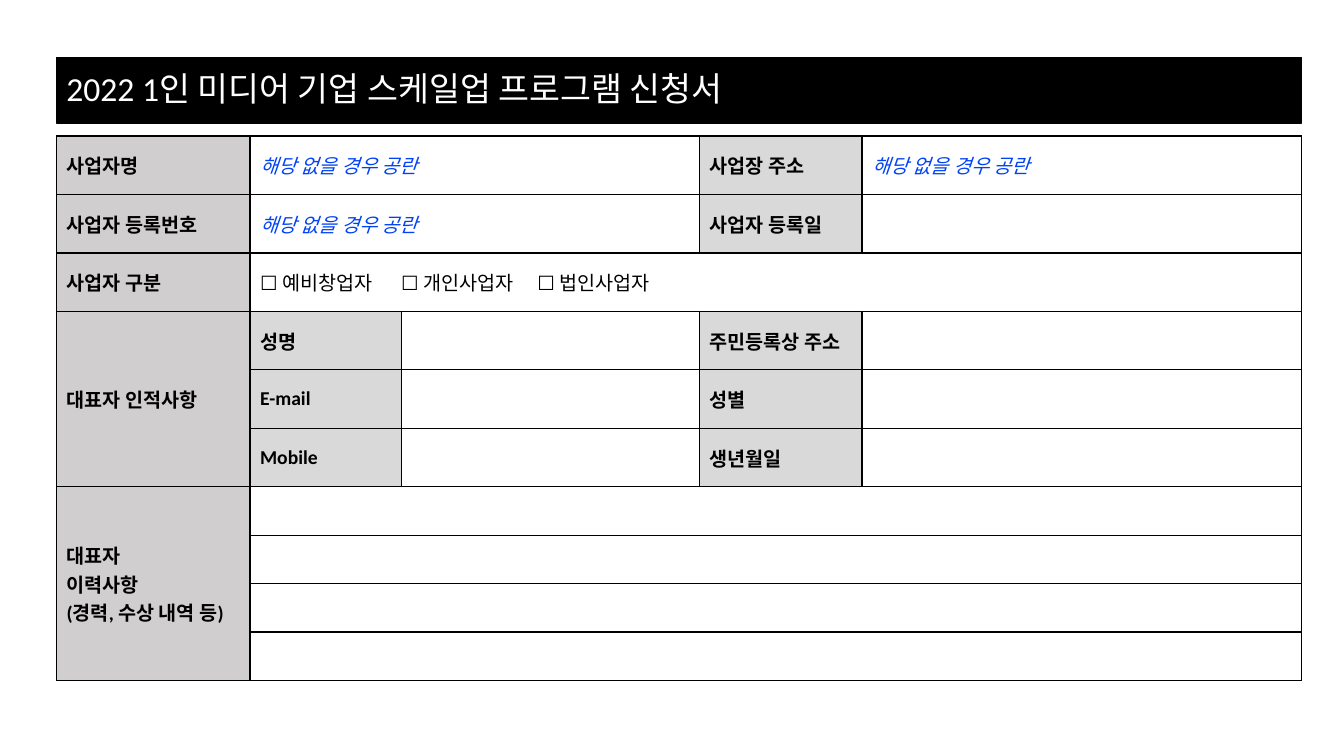
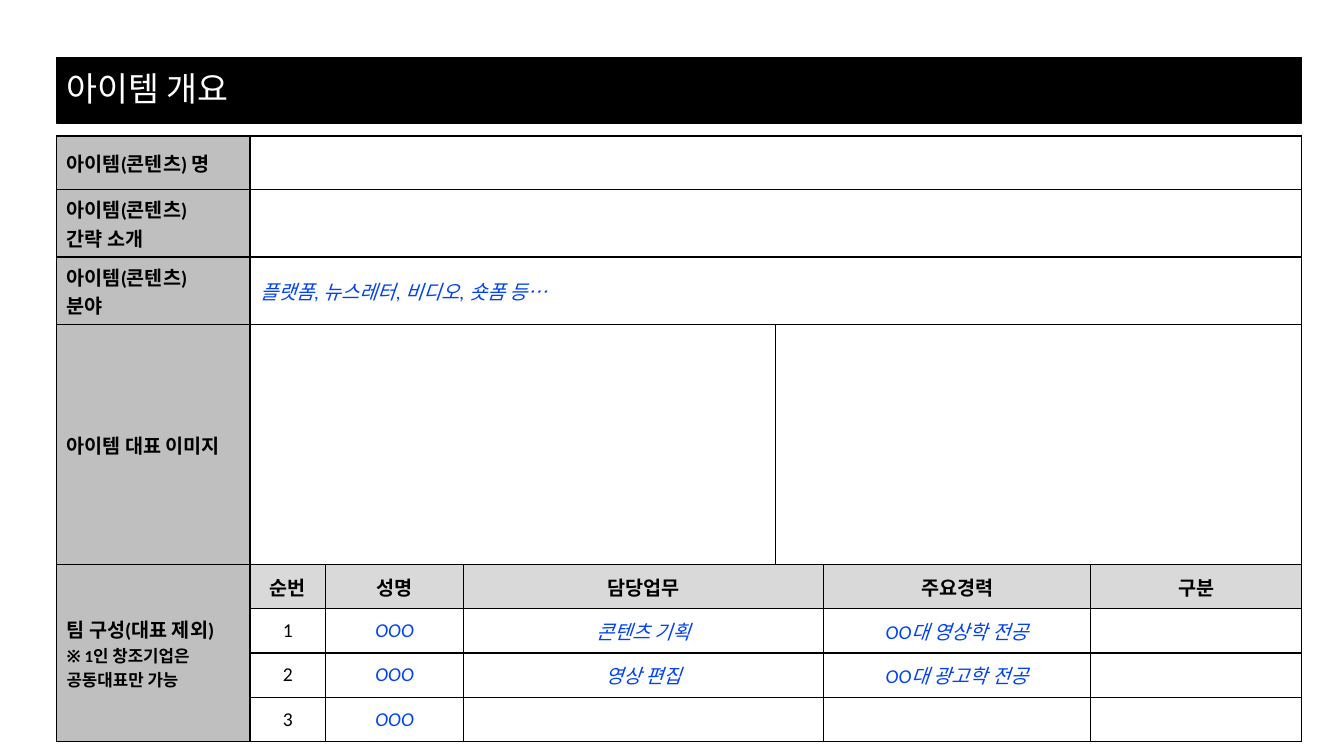
from lxml import etree
from pptx import Presentation
from pptx import util as u
from pptx.dml.color import RGBColor
from pptx.enum import shapes, text
from pptx.oxml.ns import qn

PX = 9144
MIDDLE = text.MSO_ANCHOR.MIDDLE
LEFT, CENTER = text.PP_ALIGN.LEFT, text.PP_ALIGN.CENTER


def px(n):
    return u.Emu(n * PX)


def rgb(value):
    return RGBColor.from_string(value)


def put_text(tf, content, size=14, color="000000", bold=False, italic=False,
             align=LEFT, spacing=1.0, font="Calibri", note_size=None, tabs=()):
    for i, line in enumerate(content.split("\n")):
        p = tf.add_paragraph() if i else tf.paragraphs[0]
        p.alignment = align
        p.line_spacing = spacing
        if tabs:
            tab_list = etree.SubElement(p._p.get_or_add_pPr(), qn("a:tabLst"))
            for stop in tabs:
                etree.SubElement(tab_list, qn("a:tab"), pos=str(px(stop)), algn="l")
        r = p.add_run()
        r.text = line
        r.font.name = font
        r.font.size = u.Pt(note_size if i and note_size else size)
        r.font.bold = bold
        r.font.italic = italic
        r.font.color.rgb = rgb(color)


class Deck:
    LEFT, WIDTH = 56, 1235
    BLACK, WHITE = "000000", "FFFFFF"
    STYLES = {
        "side": ("D0CECE", dict(bold=True)),
        "dark_side": ("BFBFBF", dict(bold=True)),
        "label": ("D9D9D9", dict(bold=True)),
        "head": ("D9D9D9", dict(bold=True, align=CENTER)),
        "body": (WHITE, {}),
        "number": (WHITE, dict(align=CENTER)),
        "hint": (WHITE, dict(color="0042F4", italic=True)),
        "sample": (WHITE, dict(color="0042F4", italic=True, align=CENTER)),
    }

    def __init__(self):
        self.prs = Presentation()
        self.prs.slide_width = u.Inches(13.33)
        self.prs.slide_height = u.Inches(7.5)
        self.s = None

    def slide(self, title):
        self.s = self.prs.slides.add_slide(self.prs.slide_layouts[6])
        self.title(title)

    def title(self, content):
        sp = self.s.shapes.add_shape(shapes.MSO_SHAPE.RECTANGLE, px(self.LEFT),
                                     px(57), px(self.WIDTH), px(65))
        sp.shadow.inherit = False
        sp.fill.solid()
        sp.fill.fore_color.rgb = rgb(self.BLACK)
        sp.line.color.rgb = rgb(self.BLACK)
        sp.line.width = u.Pt(1)
        tf = sp.text_frame
        tf.word_wrap = True
        tf.vertical_anchor = MIDDLE
        put_text(tf, content, size=24, color=self.WHITE, spacing=0.9)

    def table(self, cols, rows):
        frame = self.s.shapes.add_table(len(rows), len(cols), px(self.LEFT),
                                        px(135), px(self.WIDTH), px(sum(rows)))
        table = frame.table
        table.first_row = table.horz_banding = False
        for column, width in zip(table.columns, cols):
            column.width = px(width)
        for row, height in zip(table.rows, rows):
            row.height = px(height)
        for cell in table.iter_cells():
            self.border(cell)
            self.fill(cell, self.WHITE)
        return table

    def border(self, cell):
        tc_pr = cell._tc.get_or_add_tcPr()
        for side in ("a:lnL", "a:lnR", "a:lnT", "a:lnB"):
            ln = etree.SubElement(tc_pr, qn(side), w=str(u.Pt(1)))
            solid = etree.SubElement(ln, qn("a:solidFill"))
            etree.SubElement(solid, qn("a:srgbClr"), val=self.BLACK)

    def fill(self, cell, color):
        cell.fill.solid()
        cell.fill.fore_color.rgb = rgb(color)

    def cell(self, table, row, col, content="", style="body", down=1, across=1, **extra):
        cell = table.cell(row, col)
        if down > 1 or across > 1:
            cell.merge(table.cell(row + down - 1, col + across - 1))
        color, form = self.STYLES[style]
        self.fill(cell, color)
        cell.vertical_anchor = MIDDLE
        if content:
            put_text(cell.text_frame, content, **form, **extra)


def application(deck):
    deck.slide("2022 1인 미디어 기업 스케일업 프로그램 신청서")
    t = deck.table([192, 150, 296, 161, 436], [58] * 6 + [48] * 4)
    blank = "해당 없을 경우 공란"

    for row, name in enumerate(["사업자명", "사업자 등록번호", "사업자 구분"]):
        deck.cell(t, row, 0, name, "side")
    for row, name in enumerate(["사업장 주소", "사업자 등록일"]):
        deck.cell(t, row, 1, blank, "hint", across=2)
        deck.cell(t, row, 3, name, "label")
    deck.cell(t, 0, 4, blank, "hint")
    deck.cell(t, 2, 1, "☐ 예비창업자\t☐ 개인사업자\t☐ 법인사업자", across=4, tabs=(140, 275))

    deck.cell(t, 3, 0, "대표자 인적사항", "side", down=3)
    personal = [("성명", "주민등록상 주소"), ("E-mail", "성별"), ("Mobile", "생년월일")]
    for row, (first, second) in enumerate(personal, 3):
        deck.cell(t, row, 1, first, "label")
        deck.cell(t, row, 3, second, "label")

    deck.cell(t, 6, 0, "대표자\n이력사항\n(경력, 수상 내역 등)", "side", down=4)
    for row in range(6, 10):
        deck.cell(t, row, 1, across=4)


def item_overview(deck):
    deck.slide("아이템 개요")
    t = deck.table([192, 75, 137, 309, 48, 265, 209], [53, 67, 67, 238] + [44] * 4)

    items = [
        ("아이템(콘텐츠) 명", ""),
        ("아이템(콘텐츠)\n간략 소개", ""),
        ("아이템(콘텐츠)\n분야", "플랫폼, 뉴스레터, 비디오, 숏폼 등…"),
    ]
    for row, (name, hint) in enumerate(items):
        deck.cell(t, row, 0, name, "dark_side")
        deck.cell(t, row, 1, hint, "hint", across=6)

    deck.cell(t, 3, 0, "아이템 대표 이미지", "dark_side")
    for col in (1, 4):
        deck.cell(t, 3, col, across=3)

    deck.cell(t, 4, 0, "팀 구성(대표 제외)\n※ 1인 창조기업은 공동대표만 가능",
              "dark_side", down=4, note_size=12)
    team = [
        ("순번", "성명", "담당업무", "주요경력", "구분"),
        ("1", "OOO", "콘텐츠 기획", "OO대 영상학 전공", ""),
        ("2", "OOO", "영상 편집", "OO대 광고학 전공", ""),
        ("3", "OOO", "", "", ""),
    ]
    for row, member in enumerate(team, 4):
        for col, content in zip((1, 2, 3, 5, 6), member):
            style = "head" if row == 4 else "number" if col == 1 else "sample"
            deck.cell(t, row, col, content, style, across=2 if col == 3 else 1)


def main():
    deck = Deck()
    application(deck)
    item_overview(deck)
    deck.prs.save("out.pptx")


if __name__ == "__main__":
    main()
